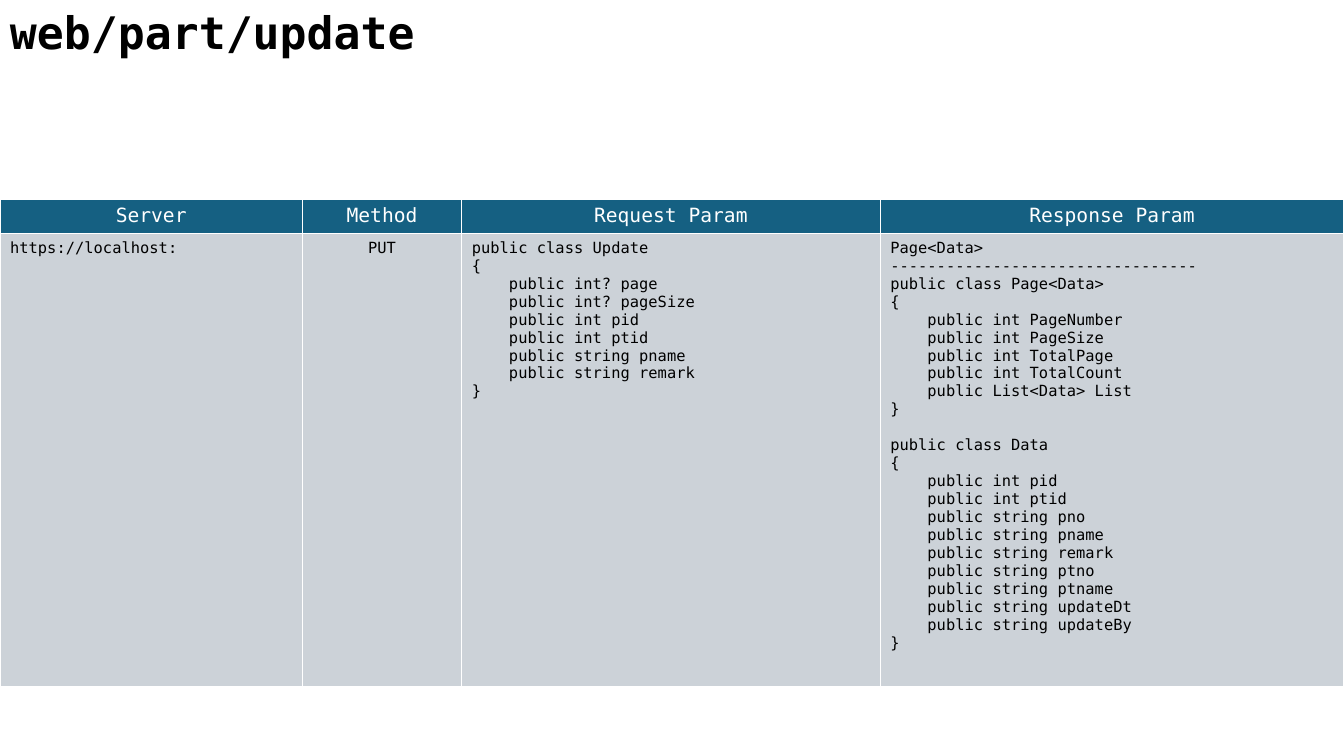
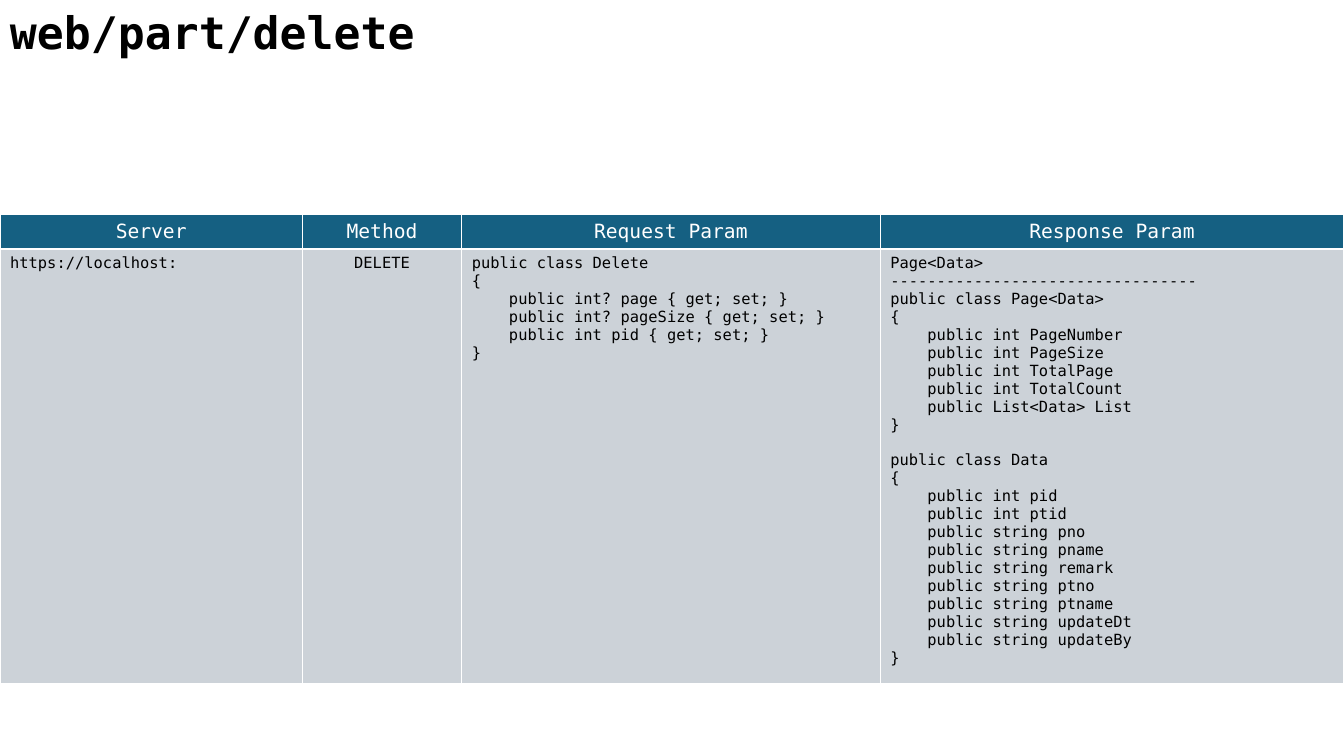
"""Build two web API reference slides, each with a title and a table."""
import pptx
import pptx.dml.color
import pptx.enum.text
import pptx.oxml
import pptx.oxml.ns
import pptx.util

Inches = pptx.util.Inches
Pt = pptx.util.Pt
RGBColor = pptx.dml.color.RGBColor
ALIGN = pptx.enum.text.PP_ALIGN

WHITE = RGBColor(0xFF, 0xFF, 0xFF)
BLACK = RGBColor(0, 0, 0)
TEAL = RGBColor(0x15, 0x60, 0x82)
GREY = RGBColor(0xCC, 0xD2, 0xD8)

FONT = "DejaVu Sans Mono"
TITLE = {"name": FONT, "size": Pt(32), "bold": True}
HEAD = {"name": FONT, "size": Pt(14), "bold": False}
BODY = {"name": FONT, "size": Pt(11), "bold": False}
GAP = Pt(12.8)

COLS = [
    ("Server", 3, ALIGN.LEFT),
    ("Method", 1.58, ALIGN.CENTER),
    ("Request Param", 4.15, ALIGN.LEFT),
    ("Response Param", 4.6, ALIGN.LEFT),
]
HEAD_H = 0.34
SERVER = "https://localhost:"

PAGE = ["int PageNumber", "int PageSize", "int TotalPage",
        "int TotalCount", "List<Data> List"]
DATA = ["int pid", "int ptid", "string pno", "string pname", "string remark",
        "string ptno", "string ptname", "string updateDt", "string updateBy"]

CALLS = [
    {
        "title": "web/part/update", "verb": "PUT", "model": "Update",
        "fields": ["int? page", "int? pageSize", "int pid", "int ptid",
                   "string pname", "string remark"],
        "tail": "", "top": 1.98, "height": 4.83,
    },
    {
        "title": "web/part/delete", "verb": "DELETE", "model": "Delete",
        "fields": ["int? page", "int? pageSize", "int pid"],
        "tail": " { get; set; }", "top": 2.13, "height": 4.65,
    },
]


def code(name, fields, tail=""):
    """Return the lines of a class listing."""
    lines = [f"    public {field}{tail}" for field in fields]
    return [f"public class {name}", "{", *lines, "}"]


REPLY = [["Page<Data>", "-" * 33, *code("Page<Data>", PAGE)],
         code("Data", DATA)]


def style(para, form, color):
    """Apply font values and a colour to a paragraph."""
    for key, value in form.items():
        setattr(para.font, key, value)
    para.font.color.rgb = color


def write(frame, blocks, form, color, align=ALIGN.LEFT):
    """Write blocks of lines with a gap between blocks."""
    para = None
    for block in blocks:
        for row, line in enumerate(block):
            first = para is None
            para = frame.paragraphs[0] if first else frame.add_paragraph()
            para.text = line
            para.alignment = align
            if row == 0 and not first:
                para.space_before = GAP
            style(para, form, color)


def border(cell):
    """Draw a thin white line on each side of a cell."""
    props = cell._tc.get_or_add_tcPr()
    space = pptx.oxml.ns.nsdecls("a")
    for side in "LRTB":
        props.append(pptx.oxml.parse_xml(
            f'<a:ln{side} {space} w="{Pt(1)}"><a:solidFill>'
            f'<a:srgbClr val="{WHITE}"/></a:solidFill></a:ln{side}>'))


def fill(cell, color):
    """Give a cell its borders and solid fill."""
    border(cell)
    cell.fill.solid()
    cell.fill.fore_color.rgb = color


def add_title(slide, text):
    """Add the slide title."""
    box = slide.shapes.add_textbox(0, 0, Inches(9.45), Inches(0.64))
    box.text_frame.word_wrap = True
    write(box.text_frame, [[text]], TITLE, BLACK)


def add_grid(slide, call):
    """Add the table that describes one call."""
    width = sum(col[1] for col in COLS)
    grid = slide.shapes.add_table(
        2, len(COLS), 0, Inches(call["top"]),
        Inches(width), Inches(call["height"])).table
    grid.horz_banding = False
    grid.rows[0].height = Inches(HEAD_H)
    grid.rows[1].height = Inches(call["height"] - HEAD_H)
    request = code(call["model"], call["fields"], call["tail"])
    cells = [[[SERVER]], [[call["verb"]]], [request], REPLY]
    for num, ((label, wide, align), blocks) in enumerate(zip(COLS, cells)):
        grid.columns[num].width = Inches(wide)
        head, body = grid.cell(0, num), grid.cell(1, num)
        fill(head, TEAL)
        write(head.text_frame, [[label]], HEAD, WHITE, ALIGN.CENTER)
        fill(body, GREY)
        write(body.text_frame, blocks, BODY, BLACK, align)


def main():
    """Build and save the deck."""
    deck = pptx.Presentation()
    deck.slide_width = Inches(13.33)
    deck.slide_height = Inches(7.5)
    for call in CALLS:
        slide = deck.slides.add_slide(deck.slide_layouts[6])
        add_title(slide, call["title"])
        add_grid(slide, call)
    deck.save("out.pptx")


if __name__ == "__main__":
    main()
